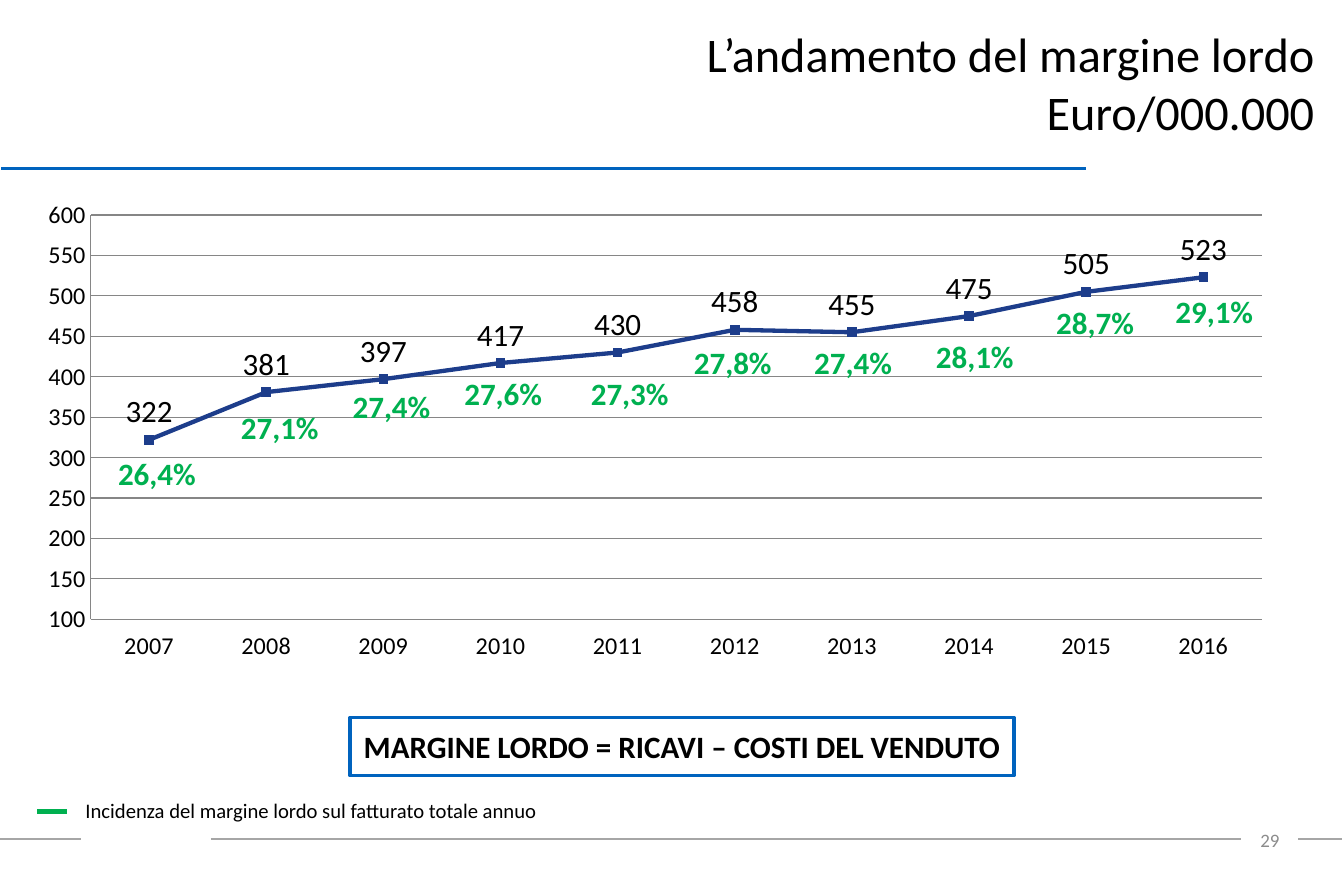
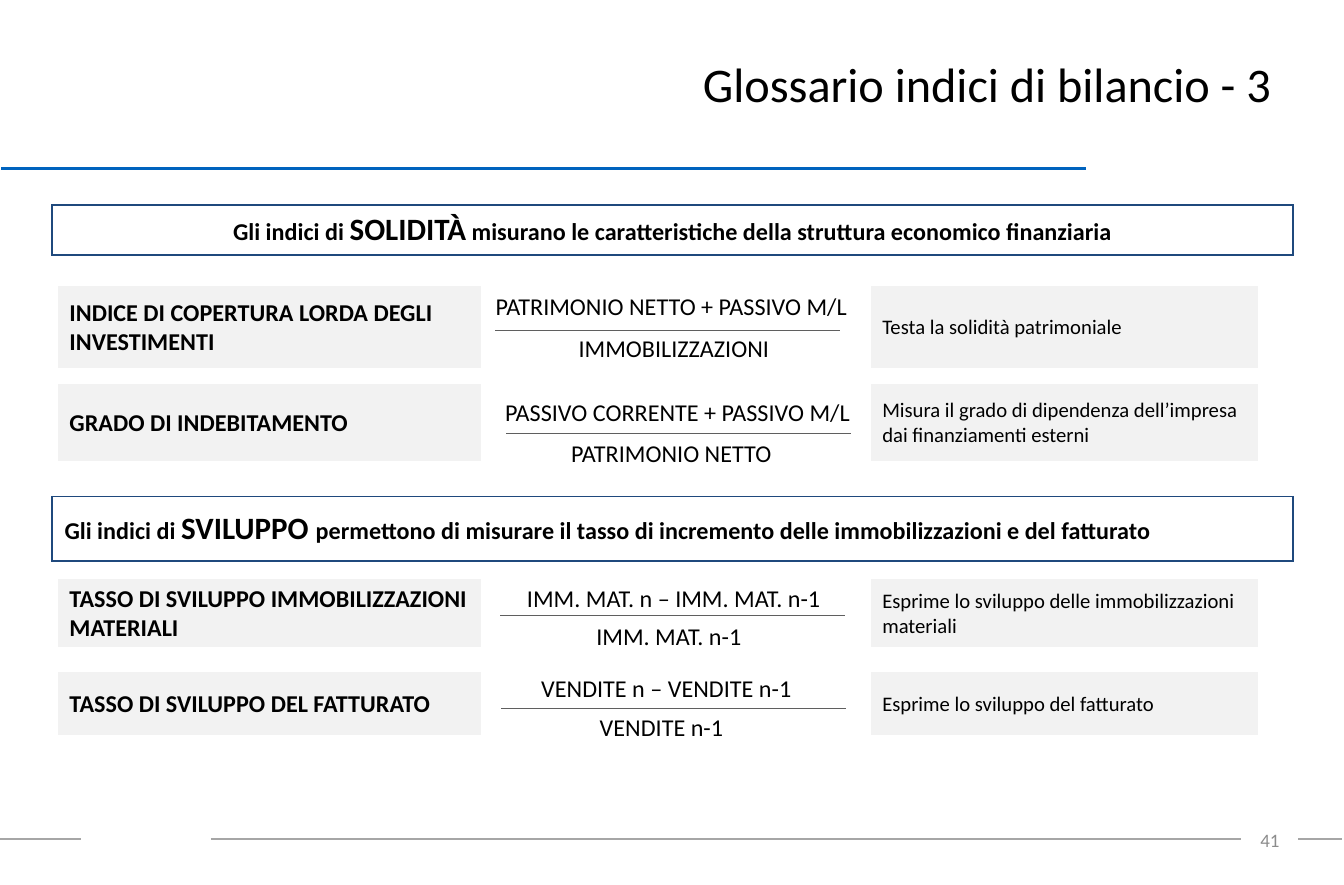
from dataclasses import dataclass

from lxml import etree
from pptx import Presentation
from pptx.chart.data import CategoryChartData
from pptx.dml.color import RGBColor
from pptx.enum.chart import (XL_CHART_TYPE, XL_LABEL_POSITION, XL_MARKER_STYLE,
                             XL_TICK_LABEL_POSITION, XL_TICK_MARK)
from pptx.enum.shapes import MSO_CONNECTOR, MSO_SHAPE
from pptx.enum.text import MSO_ANCHOR, MSO_AUTO_SIZE, PP_ALIGN
from pptx.oxml.ns import qn
from pptx.util import Inches, Pt

LEFT, CENTER, RIGHT = PP_ALIGN.LEFT, PP_ALIGN.CENTER, PP_ALIGN.RIGHT
MIDDLE, TOP = MSO_ANCHOR.MIDDLE, MSO_ANCHOR.TOP
STRAIGHT = MSO_CONNECTOR.STRAIGHT
NO_TICK = XL_TICK_MARK.NONE
TITLE_ONLY = 5


@dataclass(frozen=True)
class Theme:
    font: str = "Calibri"
    ink: str = "000000"
    accent: str = "0063BE"
    series: str = "1D3D8B"
    share: str = "00B050"
    frame: str = "1F497D"
    panel: str = "F2F2F2"
    paper: str = "FFFFFF"
    footer: str = "A6A6A6"
    page: str = "8C8C8C"
    grid: str = "868686"
    bar: str = "5F5F5F"
    title_size: int = 28
    strong_size: int = 18
    body_size: int = 14
    note_size: int = 12
    page_size: int = 11


THEME = Theme()


@dataclass(frozen=True)
class Ratio:
    top: float
    height: float
    name: str
    meaning: str
    numerator: str
    numerator_at: tuple
    denominator: str
    denominator_at: tuple
    bar_at: tuple


MARGINS = [
    ("2007", 322, "26,4%", 0.85, 3.61),
    ("2008", 381, "27,1%", 1.84, 3.24),
    ("2009", 397, "27,4%", 2.74, 3.07),
    ("2010", 417, "27,6%", 3.64, 2.97),
    ("2011", 430, "27,3%", 4.66, 2.97),
    ("2012", 458, "27,8%", 5.49, 2.72),
    ("2013", 455, "27,4%", 6.46, 2.72),
    ("2014", 475, "28,1%", 7.44, 2.67),
    ("2015", 505, "28,7%", 8.41, 2.4),
    ("2016", 523, "29,1%", 9.37, 2.31),
]

RATIOS = [
    Ratio(2.3, 0.68, "INDICE DI COPERTURA LORDA DEGLI INVESTIMENTI",
          "Testa la solidità patrimoniale",
          "PATRIMONIO NETTO + PASSIVO M/L", (4.95, 0),
          "IMMOBILIZZAZIONI", (4.97, 0.34), (3.53, 0.36)),
    Ratio(3.09, 0.64, "GRADO DI INDEBITAMENTO",
          "Misura il grado di dipendenza dell’impresa dai finanziamenti esterni",
          "PASSIVO CORRENTE + PASSIVO M/L", (5, 0.06),
          "PATRIMONIO NETTO", (4.95, 0.39), (3.62, 0.4)),
    Ratio(4.66, 0.57, "TASSO DI SVILUPPO IMMOBILIZZAZIONI MATERIALI",
          "Esprime lo sviluppo delle immobilizzazioni materiali",
          "IMM. MAT. n – IMM. MAT. n-1", (4.97, -0.01),
          "IMM. MAT. n-1", (4.93, 0.3), (3.57, 0.3)),
    Ratio(5.41, 0.53, "TASSO DI SVILUPPO DEL FATTURATO",
          "Esprime lo sviluppo del fatturato",
          "VENDITE n – VENDITE n-1", (4.91, -0.03),
          "VENDITE n-1", (4.87, 0.28), (3.58, 0.3)),
]


def rgb(color):
    return RGBColor.from_string(color)


def style(paragraph, size, color=THEME.ink, bold=False, align=LEFT):
    paragraph.alignment = align
    font = paragraph.font
    font.name, font.bold = THEME.font, bold
    font.color.rgb = rgb(color)
    if size:
        font.size = Pt(size)


def add_label(slide, box, text, size, color=THEME.ink, bold=False, align=LEFT,
              wrap=False, anchor=TOP, side=0.1):
    label = slide.shapes.add_textbox(*map(Inches, box))
    frame = label.text_frame
    frame.word_wrap = wrap
    frame.auto_size = MSO_AUTO_SIZE.NONE
    frame.vertical_anchor = anchor
    frame.margin_left = frame.margin_right = Inches(side)
    frame.text = text
    style(frame.paragraphs[0], size, color, bold, align)


def add_rule(slide, left, top, width, color, weight):
    rule = slide.shapes.add_connector(STRAIGHT, Inches(left), Inches(top),
                                      Inches(left + width), Inches(top))
    rule.line.color.rgb = rgb(color)
    rule.line.width = Pt(weight)
    etree.SubElement(rule._element.spPr, qn("a:effectLst"))


def start_slide(deck, title, title_box, page):
    slide = deck.slides.add_slide(deck.slide_layouts[TITLE_ONLY])
    for left, right in ((0, 0.65), (1.7, 10), (10.46, 10.81)):
        add_rule(slide, left, 6.76, right - left, THEME.footer, 1)
    add_rule(slide, 0.01, 1.36, 8.74, THEME.accent, 1.5)

    heading = slide.shapes.title
    heading.left, heading.top, heading.width, heading.height = map(Inches, title_box)
    frame = heading.text_frame
    frame.auto_size = MSO_AUTO_SIZE.NONE
    frame.vertical_anchor = MIDDLE
    frame.paragraphs[0].text = title
    style(frame.paragraphs[0], THEME.title_size, align=RIGHT)

    add_label(slide, (9.94, 6.62, 0.47, 0.3), page, THEME.page_size, THEME.page,
              align=RIGHT, wrap=True, anchor=MIDDLE)
    return slide


def set_plot_area(chart, **fractions):
    plot_area = chart._chartSpace.chart.plotArea
    for old in plot_area.findall(qn("c:layout")):
        plot_area.remove(old)
    layout = etree.Element(qn("c:layout"))
    plot_area.insert(0, layout)
    manual = etree.SubElement(layout, qn("c:manualLayout"))
    settings = {"layoutTarget": "inner", "xMode": "edge", "yMode": "edge", **fractions}
    for tag, value in settings.items():
        etree.SubElement(manual, qn(f"c:{tag}")).set("val", str(value))


def add_margin_chart(slide, box):
    margin_data = CategoryChartData(number_format="#,##0")
    margin_data.categories = [row[0] for row in MARGINS]
    margin_data.add_series("Margine lordo", [row[1] for row in MARGINS])
    chart = slide.shapes.add_chart(XL_CHART_TYPE.LINE_MARKERS, *map(Inches, box),
                                   margin_data).chart
    chart.has_legend = chart.has_title = False
    chart.font.name = THEME.font
    chart.font.size = Pt(THEME.strong_size)
    chart.font.color.rgb = rgb(THEME.ink)
    set_plot_area(chart, x=0.067, y=0.041, w=0.93, h=0.772)

    years, amounts = chart.category_axis, chart.value_axis
    for axis in (years, amounts):
        axis.major_tick_mark = axis.minor_tick_mark = NO_TICK
        axis.tick_labels.font.size = Pt(THEME.body_size)
        axis.format.line.color.rgb = rgb(THEME.grid)
    years.tick_label_position = XL_TICK_LABEL_POSITION.LOW
    amounts.minimum_scale, amounts.maximum_scale, amounts.major_unit = 100, 600, 50
    amounts.tick_labels.number_format = "#,##0"
    amounts.tick_labels.number_format_is_linked = False
    amounts.has_major_gridlines = True
    amounts.major_gridlines.format.line.color.rgb = rgb(THEME.grid)

    plot = chart.plots[0]
    plot.vary_by_categories = False
    margin = plot.series[0]
    margin.smooth = False
    margin.format.line.color.rgb = rgb(THEME.series)
    margin.format.line.width = Pt(2.5)
    margin.marker.style = XL_MARKER_STYLE.SQUARE
    margin.marker.size = 5
    margin.marker.format.fill.solid()
    margin.marker.format.fill.fore_color.rgb = rgb(THEME.series)
    margin.marker.format.line.color.rgb = rgb(THEME.series)
    labels = margin.data_labels
    labels.show_value = True
    labels.position = XL_LABEL_POSITION.ABOVE
    labels.font.size = Pt(THEME.strong_size)


def add_formula(slide, box, text):
    formula = slide.shapes.add_shape(MSO_SHAPE.RECTANGLE, *map(Inches, box))
    formula.shadow.inherit = False
    formula.fill.background()
    formula.line.color.rgb = rgb(THEME.accent)
    formula.line.width = Pt(2)
    frame = formula.text_frame
    frame.word_wrap = False
    frame.vertical_anchor = MIDDLE
    frame.text = text
    style(frame.paragraphs[0], THEME.strong_size, bold=True, align=CENTER)


def add_key(slide, left, top, text):
    add_rule(slide, left, top + 0.16, 0.24, THEME.share, 3)
    add_label(slide, (left + 0.29, top, 3.88, 0.3), text, THEME.note_size)


def add_row(slide, left, top, height, widths):
    table = slide.shapes.add_table(1, len(widths), Inches(left), Inches(top),
                                   Inches(sum(widths)), Inches(height)).table
    table.first_row = table.horz_banding = False
    table.rows[0].height = Inches(height)
    for column, width in zip(table.columns, widths):
        column.width = Inches(width)
    return [table.cell(0, index) for index in range(len(widths))]


def format_cell(cell, border, bottom=1, fill=None):
    cell.vertical_anchor = MIDDLE
    properties = cell._tc.get_or_add_tcPr()
    for side, weight in (("L", 1), ("R", 1), ("T", 1), ("B", bottom)):
        edge = etree.SubElement(properties, qn(f"a:ln{side}"), w=str(Pt(weight)))
        paint = etree.SubElement(edge, qn("a:solidFill"))
        etree.SubElement(paint, qn("a:srgbClr"), val=border)
    if fill:
        cell.fill.solid()
        cell.fill.fore_color.rgb = rgb(fill)
    else:
        cell.fill.background()


def add_family(slide, left, top, height, before, keyword, after, align):
    cell, = add_row(slide, left, top, height, [10])
    format_cell(cell, THEME.frame)
    sentence = cell.text_frame.paragraphs[0]
    style(sentence, None, bold=True, align=align)
    for text, size in ((before, THEME.body_size), (keyword, THEME.strong_size),
                       (after, THEME.body_size)):
        run = sentence.add_run()
        run.text = text
        run.font.size = Pt(size)


def add_ratio(slide, left, ratio):
    cells = add_row(slide, left, ratio.top, ratio.height, [3.42, 3.13, 3.13])
    for cell, fill in zip(cells, (THEME.panel, None, THEME.panel)):
        format_cell(cell, THEME.paper, bottom=3, fill=fill)
    for cell, text, size, bold in ((cells[0], ratio.name, THEME.body_size, True),
                                   (cells[2], ratio.meaning, THEME.note_size, False)):
        cell.text = text
        style(cell.text_frame.paragraphs[0], size, bold=bold)

    term_width = 3.15
    for text, (middle, drop) in ((ratio.numerator, ratio.numerator_at),
                                 (ratio.denominator, ratio.denominator_at)):
        box = (left + middle - term_width / 2, ratio.top + drop, term_width, 0.34)
        add_label(slide, box, text, THEME.body_size, align=CENTER, wrap=True, side=0.02)
    bar_left, bar_drop = ratio.bar_at
    add_rule(slide, left + bar_left, ratio.top + bar_drop, 2.78, THEME.bar, 0.75)


def build_margin_slide(deck):
    slide = start_slide(deck, "L’andamento del margine lordo\vEuro/000.000",
                        (0.05, 0, 10.64, 1.33), "29")
    add_margin_chart(slide, (0.05, 1.56, 10.15, 4.22))
    add_formula(slide, (2.82, 5.78, 5.35, 0.47),
                "MARGINE LORDO = RICAVI – COSTI DEL VENDUTO")
    add_key(slide, 0.3, 6.38, "Incidenza del margine lordo sul fatturato totale annuo")
    for _, _, share, left, top in MARGINS:
        add_label(slide, (left, top, 0.83, 0.4), share, THEME.strong_size,
                  THEME.share, bold=True, align=CENTER)


def build_glossary_slide(deck):
    slide = start_slide(deck, "Glossario indici di bilancio - 3",
                        (0.05, 0, 10.29, 1.34), "41")
    add_family(slide, 0.42, 1.65, 0.4, "Gli indici di ", "SOLIDITÀ",
               " misurano le caratteristiche della struttura economico finanziaria",
               CENTER)
    add_family(slide, 0.42, 4, 0.52, "Gli indici di ", "SVILUPPO ",
               "permettono di misurare il tasso di incremento delle immobilizzazioni"
               " e del fatturato", LEFT)
    for ratio in RATIOS:
        add_ratio(slide, 0.46, ratio)


def main():
    deck = Presentation()
    deck.slide_width, deck.slide_height = Inches(10.83), Inches(7.13)
    build_margin_slide(deck)
    build_glossary_slide(deck)
    deck.save("out.pptx")


if __name__ == "__main__":
    main()
